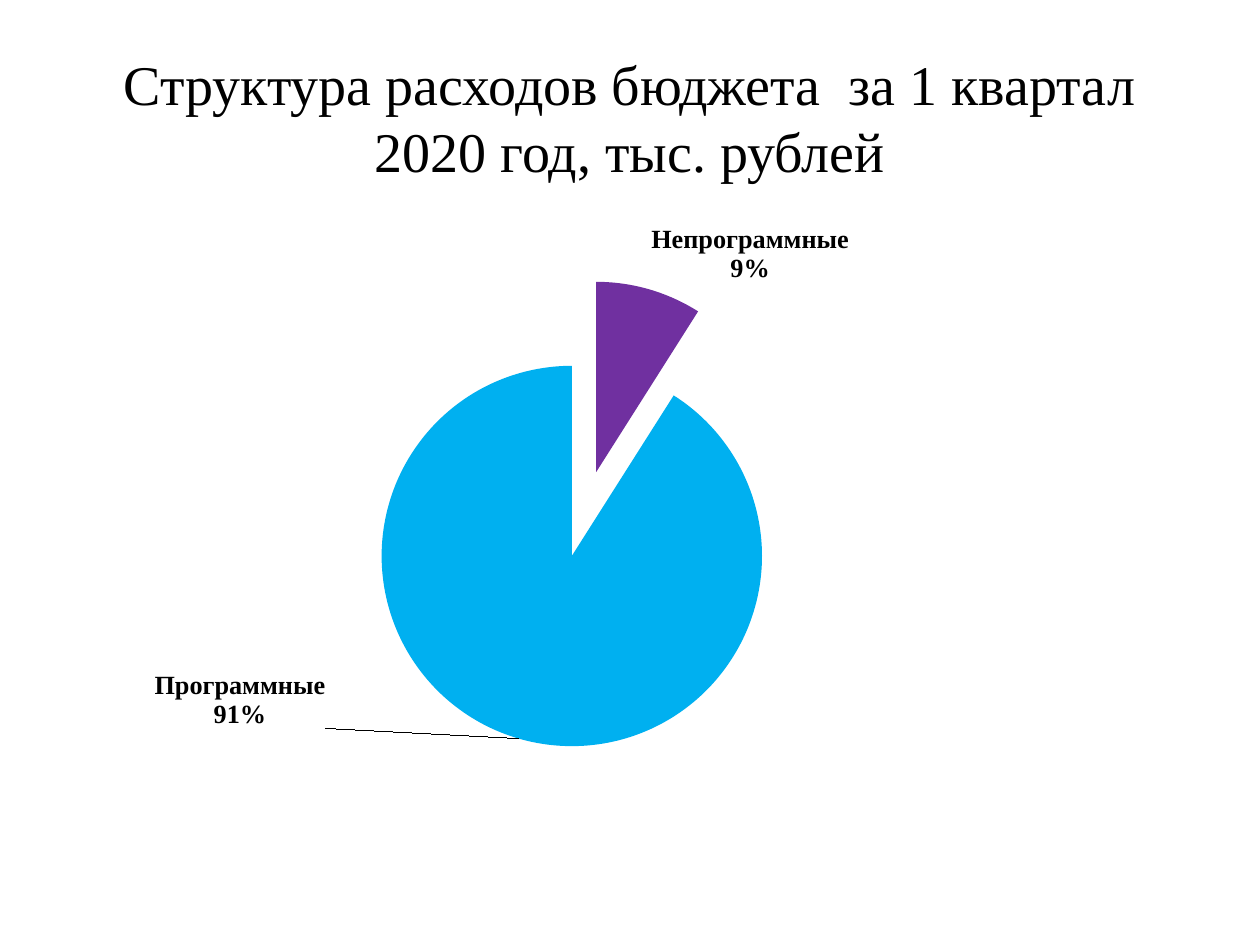
from lxml.etree import SubElement
from pptx import Presentation
from pptx.chart.data import CategoryChartData
from pptx.dml.color import RGBColor
from pptx.enum.chart import XL_CHART_TYPE, XL_LABEL_POSITION
from pptx.enum.text import MSO_ANCHOR, PP_ALIGN
from pptx.oxml.ns import qn
from pptx.util import Inches, Pt

COLORS = {"text": "000000", "non_program": "7030A0", "program": "00B0F0"}
FONT = "Times New Roman"
SHARES = [("Непрограммные", 9, "non_program"), ("Программные", 91, "program")]


def format_font(font, size, bold=False, name=FONT, color="text"):
    font.name = name
    font.size = Pt(size)
    font.bold = bold
    font.color.rgb = RGBColor.from_string(COLORS[color])


def set_text(shape, text, size, align=PP_ALIGN.CENTER, **kwargs):
    tf = shape.text_frame
    tf.word_wrap = True
    tf.vertical_anchor = MSO_ANCHOR.MIDDLE
    p = tf.paragraphs[0]
    p.alignment = align
    r = p.add_run()
    r.text = text
    format_font(r.font, size, **kwargs)


def place(shape, left, top, width, height):
    shape.left, shape.top = Inches(left), Inches(top)
    shape.width, shape.height = Inches(width), Inches(height)


def make_layout(parent, **values):
    """Add a manual chart layout; the values are fractions of the chart."""
    layout = parent.makeelement(qn("c:layout"))
    manual = SubElement(layout, qn("c:manualLayout"))
    for tag, value in values.items():
        SubElement(manual, qn(f"c:{tag}")).set("val", str(value))
    return layout


def show_category_and_percent(labels):
    """Show category and percent on two lines in a label element."""
    for tag in ("LegendKey", "Val", "CatName", "SerName", "Percent", "BubbleSize"):
        flag = labels.find(qn(f"c:show{tag}"))
        if flag is None:
            flag = SubElement(labels, qn(f"c:show{tag}"))
        flag.set("val", "1" if tag in ("CatName", "Percent") else "0")
    separator = labels.makeelement(qn("c:separator"))
    separator.text = "\n"
    flag.addnext(separator)


def add_pie(s):
    data = CategoryChartData()
    data.categories = [name for name, _, _ in SHARES]
    data.add_series("Series 1", [value for _, value, _ in SHARES])
    chart = s.shapes.add_chart(XL_CHART_TYPE.PIE, Inches(0.5), Inches(1.62),
                               Inches(8.44), Inches(4.97), data).chart
    chart.has_legend = False
    chart.has_title = False
    format_font(chart.font, 18, name="Calibri")

    # Slices, pulled apart
    plot = chart.plots[0]
    plot.vary_by_categories = True
    series = plot.series[0]
    for i, (_, _, color) in enumerate(SHARES):
        fill = series.points[i].format.fill
        fill.solid()
        fill.fore_color.rgb = RGBColor.from_string(COLORS[color])
    ser = series._element
    explosion = ser.makeelement(qn("c:explosion"), {"val": "23"})
    ser.find(qn("c:dPt")).addprevious(explosion)
    for point in ser.findall(qn("c:dPt")):
        point.find(qn("c:spPr")).addprevious(
            point.makeelement(qn("c:explosion"), {"val": "23"}))

    # Labels
    labels = series.data_labels
    labels.number_format = "0%"
    labels.number_format_is_linked = False
    labels.position = XL_LABEL_POSITION.BEST_FIT
    format_font(labels.font, 15, bold=True)
    show_category_and_percent(labels._element)
    label = series.points[1].data_label
    label.position = XL_LABEL_POSITION.BEST_FIT
    format_font(label.font, 15, bold=True)
    dlbl = labels._element.find(qn("c:dLbl"))
    show_category_and_percent(dlbl)
    dlbl.find(qn("c:idx")).addnext(make_layout(dlbl, x=-0.18, y=-0.12))

    # Plot area
    area = chart._chartSpace.chart.plotArea
    old = area.find(qn("c:layout"))
    if old is not None:
        area.remove(old)
    area.insert(0, make_layout(area, layoutTarget="inner", xMode="edge",
                               yMode="edge", x=0.27, y=0.12, w=0.44, h=0.75))


def main():
    prs = Presentation()
    prs.slide_width, prs.slide_height = Inches(10), Inches(7.5)
    s = prs.slides.add_slide(prs.slide_layouts[5])
    title = s.shapes.title
    place(title, 0.5, 0.3, 9, 1.25)
    set_text(title, "Структура расходов бюджета  за 1 квартал 2020 год, тыс. рублей", 32)
    add_pie(s)
    prs.save("out.pptx")


if __name__ == "__main__":
    main()
